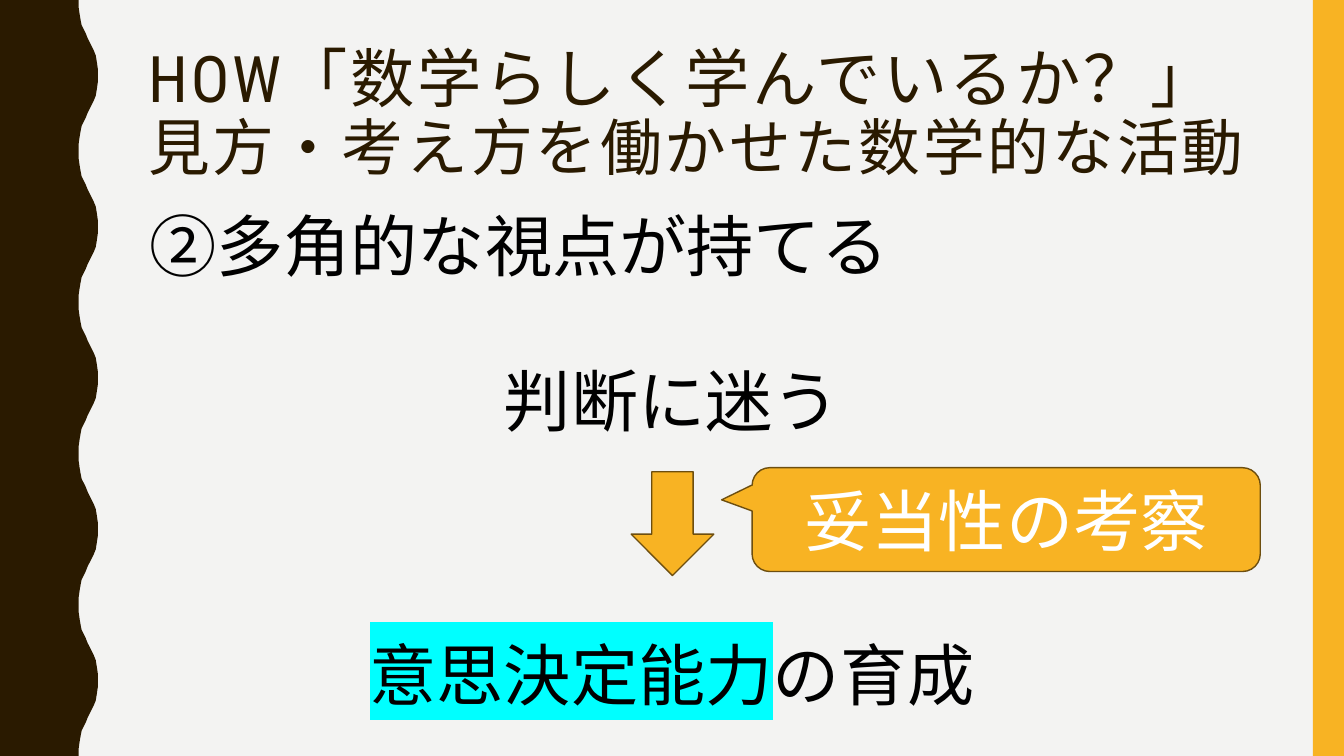
from dataclasses import dataclass

import pptx
import pptx.util
import pptx.dml.color
import pptx.enum.shapes
import pptx.enum.text
import pptx.oxml
import pptx.oxml.ns
import pptx.shapes.autoshape
import pptx.slide
import pptx.text.text

RGBColor = pptx.dml.color.RGBColor
Shapes = pptx.enum.shapes.MSO_SHAPE
Align = pptx.enum.text.PP_ALIGN
Anchor = pptx.enum.text.MSO_ANCHOR

PX = 9144  # EMU per px, 100 px to the inch
SLIDE_WIDTH, SLIDE_HEIGHT = 1333, 750

BROWN = RGBColor(0x2A, 0x1A, 0x00)
AMBER = RGBColor(0xF8, 0xB3, 0x23)
OUTLINE = RGBColor(0x6D, 0x4E, 0x0F)
PAPER = RGBColor(0xF3, 0xF3, 0xF2)
BLACK = RGBColor(0x00, 0x00, 0x00)
WHITE = RGBColor(0xFF, 0xFF, 0xFF)
CYAN = RGBColor(0x00, 0xFF, 0xFF)

TITLE_FONT = "Roboto Condensed"
STATEMENT_FONT = "Noto Sans CJK JP"
CALLOUT_FONT = "Calibri"

# Edge of the wave from trough to crest: (x, y) in px
WAVE_RISE = [(78, 0), (78, 7), (79, 14), (80, 20), (81, 25), (83, 29), (85, 33), (87, 38),
             (89, 42), (91, 46), (93, 50), (95, 55), (96, 61), (97, 68), (97, 75)]
WAVE_LENGTH = 150


@dataclass(frozen=True)
class Box:
    left: int
    top: int
    width: int
    height: int

    def emu(self) -> tuple[int, int, int, int]:
        return self.left * PX, self.top * PX, self.width * PX, self.height * PX


@dataclass(frozen=True)
class Statement:
    box: Box
    text: str
    align: Align
    highlighted: str = ""


STATEMENTS = [
    Statement(Box(138, 192, 1112, 91), "②多角的な視点が持てる", Align.LEFT),
    Statement(Box(317, 345, 699, 91), "判断に迷う", Align.CENTER),
    Statement(Box(317, 617, 699, 91), "の育成", Align.CENTER, "意思決定能力"),
]


def style_font(font: pptx.text.text.Font, name: str, size: float, color: RGBColor) -> None:
    """Set size, colour and the same typeface for Latin and East Asian text."""
    font.size = pptx.util.Pt(size)
    font.color.rgb = color
    font.name = name
    east_asian = pptx.oxml.parse_xml(
        f'<a:ea {pptx.oxml.ns.nsdecls("a")} typeface="{name}"/>')
    font._element.find(pptx.oxml.ns.qn("a:latin")).addnext(east_asian)


def highlight(run: pptx.text.text._Run, color: RGBColor) -> None:
    run.font._element.insert(0, pptx.oxml.parse_xml(
        f'<a:highlight {pptx.oxml.ns.nsdecls("a")}><a:srgbClr val="{color}"/></a:highlight>'))


def add_filled_shape(slide: pptx.slide.Slide, kind: Shapes, box: Box, fill: RGBColor,
                     outline: RGBColor | None = None) -> pptx.shapes.autoshape.Shape:
    shape = slide.shapes.add_shape(kind, *box.emu())
    shape.shadow.inherit = False
    shape.fill.solid()
    shape.fill.fore_color.rgb = fill
    if outline is None:
        shape.line.fill.background()
    else:
        shape.line.color.rgb = outline
        shape.line.width = pptx.util.Pt(1)
    return shape


def add_wavy_edge(slide: pptx.slide.Slide) -> None:
    wave = WAVE_RISE + [(x, WAVE_LENGTH - y) for x, y in reversed(WAVE_RISE[1:-1])]
    edge = [(x, start + y) for start in range(0, SLIDE_HEIGHT, WAVE_LENGTH) for x, y in wave]
    builder = slide.shapes.build_freeform(0, 0, scale=PX)
    builder.add_line_segments(edge + [(WAVE_RISE[0][0], SLIDE_HEIGHT), (0, SLIDE_HEIGHT)])
    band = builder.convert_to_shape()
    band.shadow.inherit = False
    band.fill.solid()
    band.fill.fore_color.rgb = BROWN
    band.line.fill.background()


def fill_title(slide: pptx.slide.Slide) -> None:
    title = slide.shapes.title
    title.left, title.top, title.width, title.height = Box(137, 42, 1113, 163).emu()
    frame = title.text_frame
    frame.word_wrap = True
    frame.auto_size = pptx.enum.text.MSO_AUTO_SIZE.NONE
    frame.vertical_anchor = Anchor.TOP
    paragraph = frame.paragraphs[0]
    paragraph.alignment = Align.LEFT
    paragraph.line_spacing = 0.9
    for text, size in [("HOW「数学らしく学んでいるか？」", 45.9),
                       ("見方・考え方を働かせた数学的な活動", 44.1)]:
        run = paragraph.add_run()
        run.text = text
        style_font(run.font, TITLE_FONT, size, BROWN)
        run.font._element.set("spc", "200")


def add_statement(slide: pptx.slide.Slide, statement: Statement) -> None:
    frame = slide.shapes.add_textbox(*statement.box.emu()).text_frame
    frame.word_wrap = True
    frame.vertical_anchor = Anchor.BOTTOM
    frame.margin_top = frame.margin_bottom = 0
    paragraph = frame.paragraphs[0]
    paragraph.alignment = statement.align
    style_font(paragraph.font, STATEMENT_FONT, 48, BLACK)
    if statement.highlighted:
        ability = paragraph.add_run()
        ability.text = statement.highlighted
        highlight(ability, CYAN)
    paragraph.add_run().text = statement.text


def add_callout(slide: pptx.slide.Slide) -> None:
    callout = add_filled_shape(slide, Shapes.ROUNDED_RECTANGULAR_CALLOUT,
                               Box(746, 464, 504, 103), AMBER, OUTLINE)
    for index, value in enumerate((-0.56, -0.19, 0.17)):
        callout.adjustments[index] = value
    frame = callout.text_frame
    frame.vertical_anchor = Anchor.MIDDLE
    paragraph = frame.paragraphs[0]
    paragraph.alignment = Align.CENTER
    paragraph.add_run().text = "妥当性の考察"
    style_font(paragraph.font, CALLOUT_FONT, 48, WHITE)


def main() -> None:
    presentation = pptx.Presentation()
    presentation.slide_width = SLIDE_WIDTH * PX
    presentation.slide_height = SLIDE_HEIGHT * PX
    slide = presentation.slides.add_slide(presentation.slide_layouts.get_by_name("Title Only"))
    slide.background.fill.solid()
    slide.background.fill.fore_color.rgb = PAPER

    add_wavy_edge(slide)
    add_filled_shape(slide, Shapes.RECTANGLE, Box(1302, 0, 31, SLIDE_HEIGHT), AMBER)
    fill_title(slide)
    for statement in STATEMENTS:
        add_statement(slide, statement)
    add_filled_shape(slide, Shapes.DOWN_ARROW, Box(626, 468, 82, 103), AMBER, OUTLINE)
    add_callout(slide)
    presentation.save("out.pptx")


if __name__ == "__main__":
    main()
